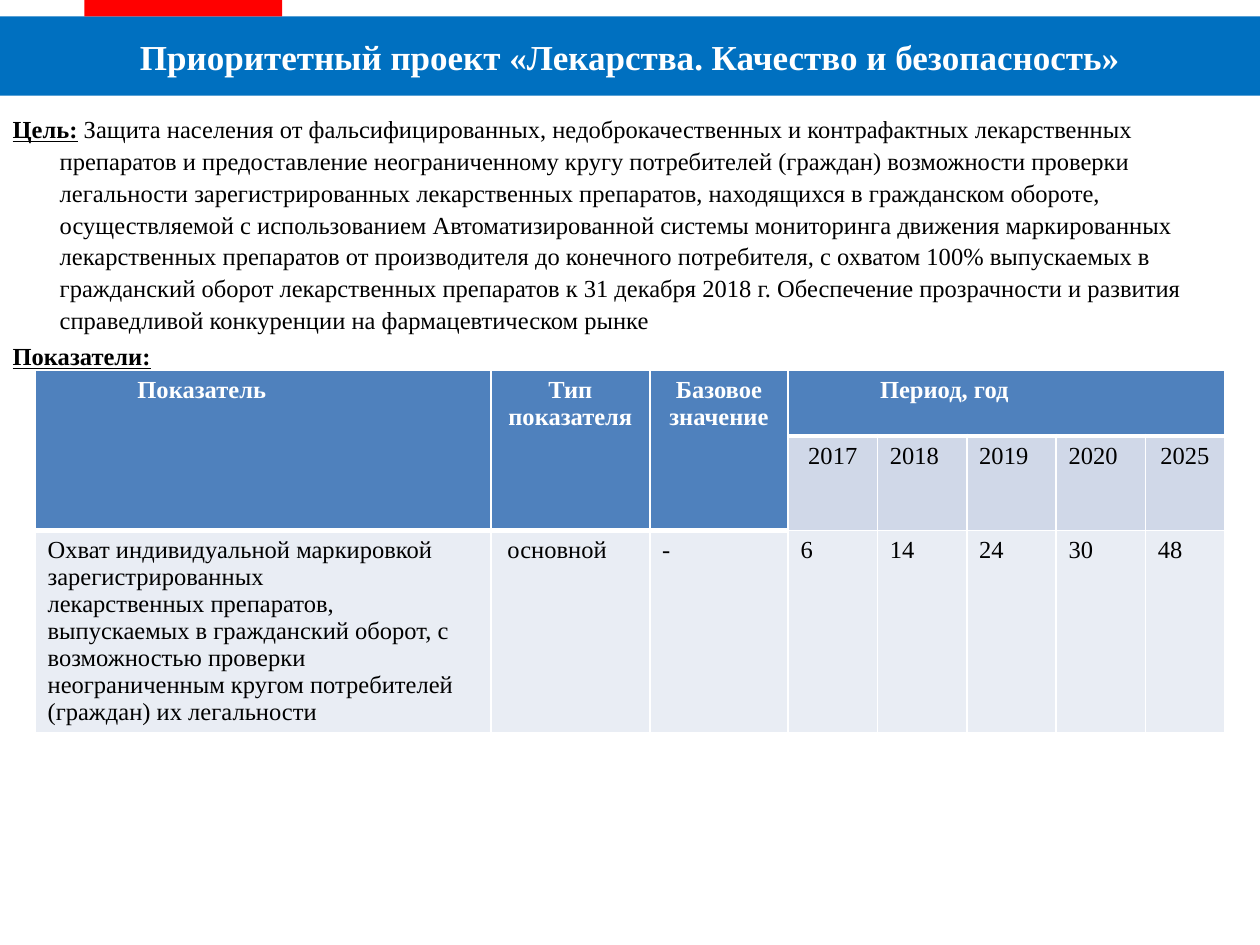
from dataclasses import dataclass

from lxml.etree import SubElement
from pptx import Presentation
from pptx.dml.color import RGBColor
from pptx.enum.shapes import MSO_SHAPE
from pptx.enum.text import MSO_ANCHOR, MSO_AUTO_SIZE, PP_ALIGN
from pptx.oxml.ns import qn
from pptx.util import Cm, Pt


@dataclass(frozen=True)
class Theme:
    font: str = "Times New Roman"
    white: str = "FFFFFF"
    black: str = "000000"
    blue: str = "0070C0"
    red: str = "FF0000"
    head: str = "4F81BD"
    year: str = "D0D8E8"
    data: str = "E9EDF4"
    large: int = 20
    small: int = 14


@dataclass(frozen=True)
class Box:
    left: float
    top: float
    width: float
    height: float

    def place(self) -> tuple:
        return Cm(self.left), Cm(self.top), Cm(self.width), Cm(self.height)


@dataclass(frozen=True)
class Entry:
    row: int
    col: int
    lines: tuple
    center: bool = False
    inset: float = 0.25
    rows: int = 1
    cols: int = 1


THEME = Theme()
BANNER = Box(0, 0.33, 25.4, 1.6)
ACCENT = Box(1.7, 0, 3.99, 0.33)
BODY = Box(0, 2.13, 25.1, 12.57)
GRID = Box(0.71, 7.47, 23.98, 7.28)
WIDTHS = [9.19, 3.2, 2.79] + [1.8] * 4 + [1.6]
HEIGHTS = [1.32, 1.9, 4.06]
FILLS = [THEME.head, THEME.year, THEME.data]
FIRST = 3

GOAL = (
    "Защита населения от фальсифицированных, недоброкачественных и контрафактных "
    "лекарственных препаратов и предоставление неограниченному кругу потребителей "
    "(граждан) возможности проверки легальности зарегистрированных лекарственных "
    "препаратов, находящихся в гражданском обороте, осуществляемой с использованием "
    "Автоматизированной системы мониторинга движения маркированных лекарственных "
    "препаратов от производителя до конечного потребителя, с охватом 100% выпускаемых "
    "в гражданский оборот лекарственных препаратов к 31 декабря 2018 г. Обеспечение "
    "прозрачности и развития справедливой конкуренции на фармацевтическом рынке"
)
SCOPE = (
    "Охват индивидуальной маркировкой зарегистрированных",
    "лекарственных препаратов, выпускаемых в гражданский оборот, с возможностью "
    "проверки неограниченным кругом потребителей (граждан) их легальности",
)
YEARS = {"2017": "6", "2018": "14", "2019": "24", "2020": "30", "2025": "48"}
MIDDLE = {"2017", "2025"}

ENTRIES = [
    Entry(0, 0, ("Показатель",), inset=2.06, rows=2),
    Entry(0, 1, ("Тип показателя",), True, rows=2),
    Entry(0, 2, ("Базовое значение",), True, rows=2),
    Entry(0, FIRST, ("Период, год",), inset=1.85, cols=len(YEARS)),
    Entry(2, 0, SCOPE),
    Entry(2, 1, ("основной",), inset=0.33),
    Entry(2, 2, ("-",)),
]
for col, (year, value) in enumerate(YEARS.items(), FIRST):
    ENTRIES += [Entry(1, col, (year,), year in MIDDLE), Entry(2, col, (value,))]


def paint(shape, color: str) -> None:
    shape.fill.solid()
    shape.fill.fore_color.rgb = RGBColor.from_string(color)


def write(para, text: str, color: str = THEME.black, size: int = THEME.small,
          bold: bool = False, under: bool = False) -> None:
    run = para.add_run()
    run.text = text
    font = run.font
    font.name, font.size = THEME.font, Pt(size)
    font.bold, font.underline = bold, under
    font.color.rgb = RGBColor.from_string(color)


def hang(para) -> None:
    props = para._p.get_or_add_pPr()
    props.set("marL", str(Cm(0.95)))
    props.set("indent", str(-Cm(0.95)))
    para.space_before = Pt(2.8)
    para.line_spacing = 1.08
    SubElement(props, qn("a:buNone"))


def border(cell, base: float) -> None:
    props = cell._tc.get_or_add_tcPr()
    for side, width in {"L": 1, "R": 1, "T": 1, "B": base}.items():
        line = SubElement(props, qn(f"a:ln{side}"), w=str(Pt(width)))
        fill = SubElement(line, qn("a:solidFill"))
        SubElement(fill, qn("a:srgbClr"), val=THEME.white)


def fill_cell(table, entry: Entry) -> None:
    cell = table.cell(entry.row, entry.col)
    if entry.rows * entry.cols > 1:
        last = table.cell(entry.row + entry.rows - 1, entry.col + entry.cols - 1)
        cell.merge(last)
    cell.margin_left = Cm(entry.inset)
    head = entry.row == 0
    color = THEME.white if head else THEME.black
    frame = cell.text_frame
    for index, text in enumerate(entry.lines):
        para = frame.add_paragraph() if index else frame.paragraphs[0]
        para.alignment = PP_ALIGN.CENTER if entry.center else PP_ALIGN.LEFT
        write(para, text, color, bold=head)


def add_grid(slide) -> None:
    table = slide.shapes.add_table(len(HEIGHTS), len(WIDTHS), *GRID.place()).table
    for col, width in zip(table.columns, WIDTHS):
        col.width = Cm(width)
    for row, height in zip(table.rows, HEIGHTS):
        row.height = Cm(height)
    for r, color in enumerate(FILLS):
        for c in range(len(WIDTHS)):
            head = r == 0 or (r == 1 and c < FIRST)
            cell = table.cell(r, c)
            border(cell, 3 if head else 1)
            paint(cell, THEME.head if head else color)
    for entry in ENTRIES:
        fill_cell(table, entry)


def add_title(slide) -> None:
    title = slide.shapes.title
    title.left, title.top, title.width, title.height = BANNER.place()
    paint(title, THEME.blue)
    frame = title.text_frame
    frame.auto_size = MSO_AUTO_SIZE.NONE
    frame.vertical_anchor = MSO_ANCHOR.MIDDLE
    para = frame.paragraphs[0]
    para.alignment = PP_ALIGN.CENTER
    write(para, "Приоритетный проект «Лекарства. Качество и безопасность»",
          THEME.white, THEME.large, bold=True)


def add_body(slide) -> None:
    body = slide.placeholders[1]
    body.left, body.top, body.width, body.height = BODY.place()
    frame = body.text_frame
    frame.auto_size = MSO_AUTO_SIZE.NONE
    goal = frame.paragraphs[0]
    hang(goal)
    write(goal, "Цель:", bold=True, under=True)
    write(goal, " ", bold=True)
    write(goal, GOAL)
    label = frame.add_paragraph()
    hang(label)
    write(label, "Показатели:", bold=True, under=True)


def add_accent(slide) -> None:
    shape = slide.shapes.add_shape(MSO_SHAPE.RECTANGLE, *ACCENT.place())
    paint(shape, THEME.red)
    shape.line.fill.background()
    shape.shadow.inherit = False


def main() -> None:
    deck = Presentation()
    deck.slide_width, deck.slide_height = Cm(25.4), Cm(19.05)
    slide = deck.slides.add_slide(deck.slide_layouts[1])
    add_title(slide)
    add_accent(slide)
    add_body(slide)
    add_grid(slide)
    deck.save("out.pptx")


if __name__ == "__main__":
    main()
